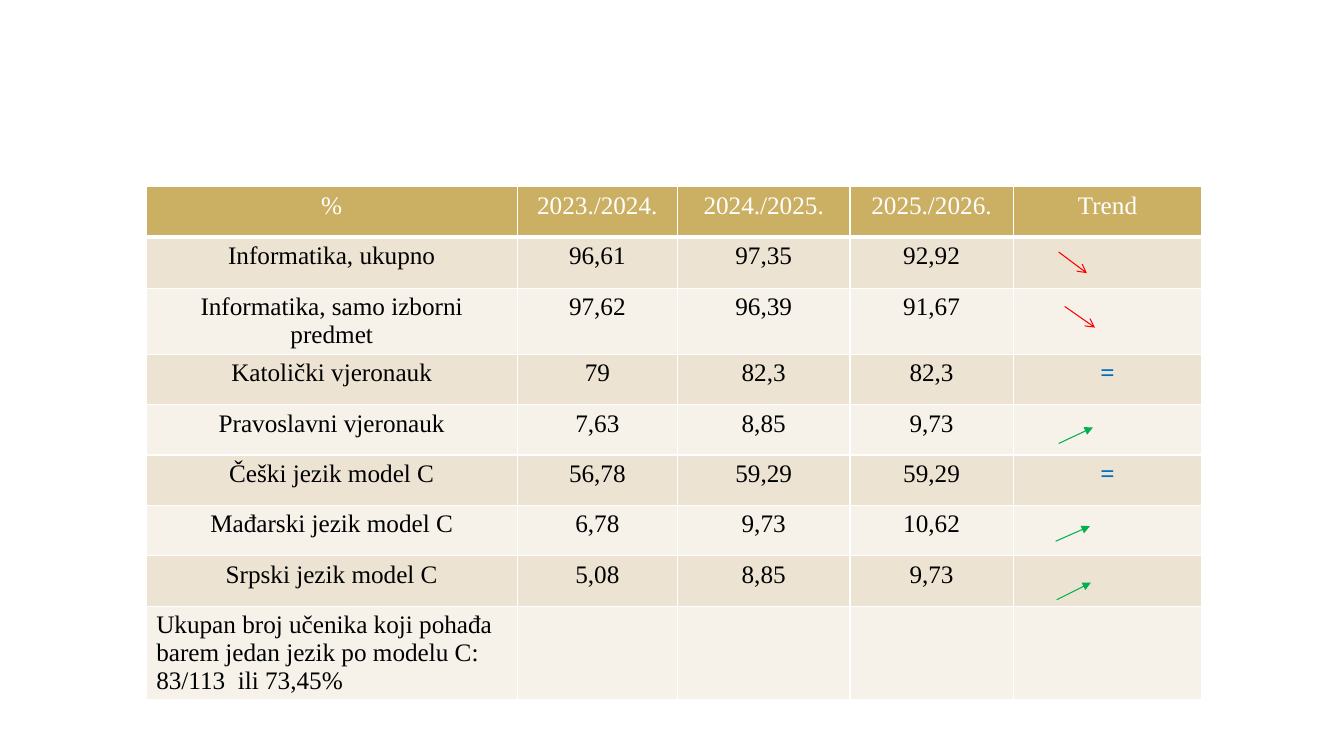
from dataclasses import dataclass

from lxml.etree import SubElement
from pptx import Presentation
from pptx.dml.color import RGBColor
from pptx.enum.shapes import MSO_CONNECTOR
from pptx.enum.text import PP_ALIGN
from pptx.oxml.ns import qn
from pptx.util import Inches, Pt


@dataclass(frozen=True)
class Theme:
    font: str = "Times New Roman"
    text_size: int = 18
    arrow_width: float = 0.75
    grid_width: float = 1
    header_rule_width: float = 3
    grid: str = "FFFFFF"
    header_fill: str = "CBAF62"
    header_text: str = "FFFFFF"
    bands: tuple = ("ECE3D3", "F6F2EA")
    text: str = "000000"
    equal: str = "0070C0"
    falling: str = "FF0000"
    rising: str = "00B050"


class SlideBuilder:
    def __init__(self, slide, theme):
        self.slide = slide
        self.theme = theme

    def border(self, cell, side, width):
        line = SubElement(cell._tc.get_or_add_tcPr(), qn(f"a:ln{side}"), w=str(Pt(width)))
        fill = SubElement(line, qn("a:solidFill"))
        SubElement(fill, qn("a:srgbClr"), val=self.theme.grid)

    def cell(self, cell, text, fill, color, align, bold, rules):
        for side in "LRTB":
            self.border(cell, side, rules.get(side, self.theme.grid_width))
        cell.fill.solid()
        cell.fill.fore_color.rgb = RGBColor.from_string(fill)
        cell.text = text
        paragraph = cell.text_frame.paragraphs[0]
        paragraph.alignment = align
        font_format = {"name": self.theme.font, "size": Pt(self.theme.text_size), "bold": bold}
        for attribute, value in font_format.items():
            setattr(paragraph.font, attribute, value)
        paragraph.font.color.rgb = RGBColor.from_string(color)

    def table(self, left, top, widths, heights, rows):
        theme = self.theme
        table = self.slide.shapes.add_table(
            len(heights), len(widths), Inches(left), Inches(top),
            Inches(sum(widths)), Inches(sum(heights))).table
        table.first_row = table.horz_banding = False
        for column, width in zip(table.columns, widths):
            column.width = Inches(width)
        for row, height in zip(table.rows, heights):
            row.height = Inches(height)
        last = len(rows) - 1
        for r, texts in enumerate(rows):
            fill = theme.bands[(r - 1) % 2] if r else theme.header_fill
            base_color = theme.text if r else theme.header_text
            rules = {0: {"B": theme.header_rule_width},
                     1: {"T": theme.header_rule_width}}.get(r, {})
            align = PP_ALIGN.LEFT if r == last else PP_ALIGN.CENTER
            for c, text in enumerate(texts):
                equal = text == "="
                self.cell(table.cell(r, c), text, fill,
                          theme.equal if equal else base_color, align, equal, rules)

    def arrow(self, start, end, color, head):
        arrow = self.slide.shapes.add_connector(
            MSO_CONNECTOR.STRAIGHT, *(Inches(value) for value in (*start, *end)))
        arrow.line.width = Pt(self.theme.arrow_width)
        arrow.line.color.rgb = RGBColor.from_string(color)
        SubElement(arrow.line._get_or_add_ln(), qn("a:tailEnd"), type=head)
        SubElement(arrow._element.spPr, qn("a:effectLst"))


# Enrolment shares by school year
ENROLMENT = [
    ("%", "2023./2024.", "2024./2025.", "2025./2026.", "Trend"),
    ("Informatika, ukupno", "96,61", "97,35", "92,92", ""),
    ("Informatika, samo izborni predmet", "97,62", "96,39", "91,67", ""),
    ("Katolički vjeronauk", "79", "82,3", "82,3", "="),
    ("Pravoslavni vjeronauk", "7,63", "8,85", "9,73", ""),
    ("Češki jezik model C", "56,78", "59,29", "59,29", "="),
    ("Mađarski jezik model C", "6,78", "9,73", "10,62", ""),
    ("Srpski jezik model C", "5,08", "8,85", "9,73", ""),
    ("Ukupan broj učenika koji pohađa barem jedan jezik po modelu C: "
     "83/113  ili 73,45%", "", "", "", ""),
]
COLUMN_WIDTHS = [3.68, 1.59, 1.71, 1.62, 1.87]
ROW_HEIGHTS = [0.5, 0.51, 0.64] + [0.5] * 5 + [0.93]

# Trend arrows: start and end points
FALLING = [((10.5, 2.5), (10.78, 2.71)), ((10.56, 3.04), (10.86, 3.25))]
RISING = [((10.5, 4.4), (10.84, 4.24)), ((10.47, 5.37), (10.81, 5.22)),
          ((10.48, 5.95), (10.82, 5.78))]


def main():
    presentation = Presentation()
    presentation.slide_width = Inches(13.33)
    presentation.slide_height = Inches(7.5)
    theme = Theme()
    blank_layout = presentation.slide_layouts[6]
    builder = SlideBuilder(presentation.slides.add_slide(blank_layout), theme)

    builder.table(1.45, 1.85, COLUMN_WIDTHS, ROW_HEIGHTS, ENROLMENT)
    for trends, color, head in ((FALLING, theme.falling, "arrow"),
                                (RISING, theme.rising, "triangle")):
        for start, end in trends:
            builder.arrow(start, end, color, head)

    presentation.save("out.pptx")


if __name__ == "__main__":
    main()
